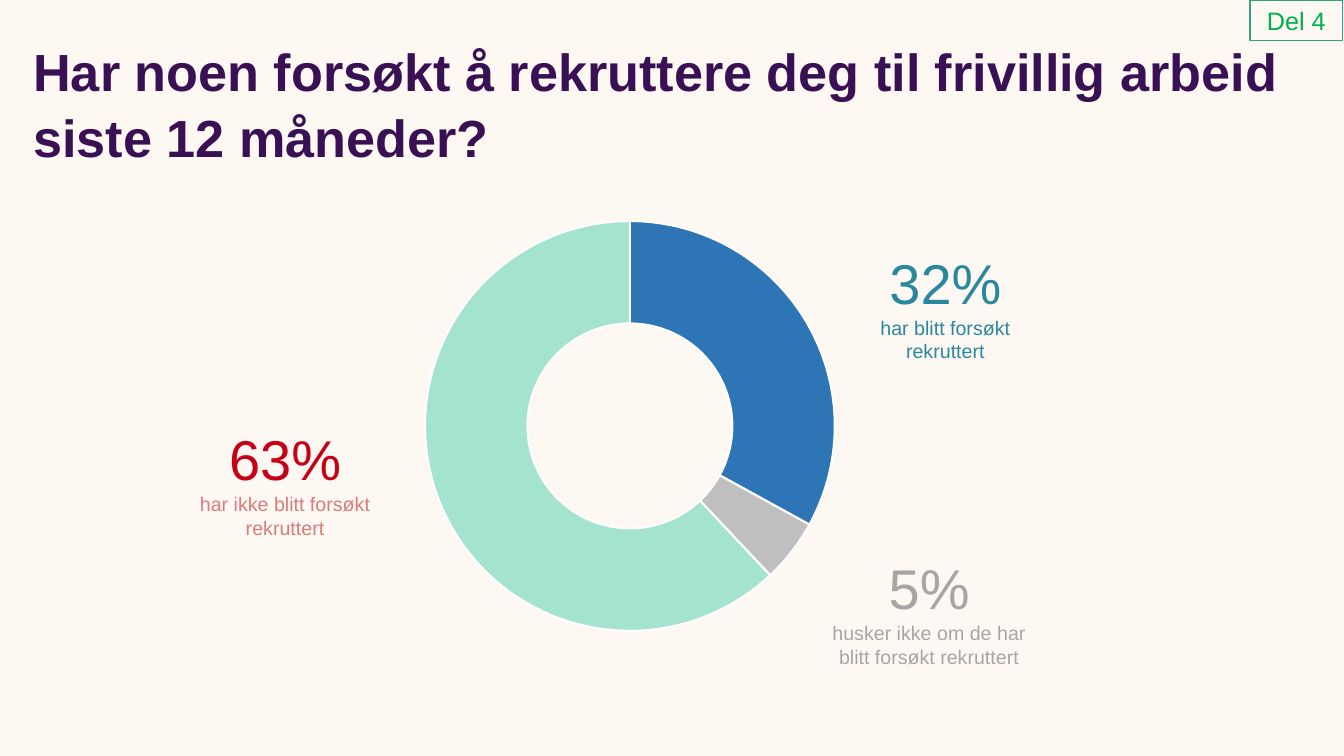
from dataclasses import dataclass

from lxml import etree
from pptx import Presentation
from pptx.chart.data import CategoryChartData as ChartData
from pptx.dml.color import RGBColor as Rgb
from pptx.enum.chart import XL_CHART_TYPE as Kind
from pptx.enum.shapes import MSO_SHAPE as Shape
from pptx.enum.text import MSO_ANCHOR as Anchor, PP_ALIGN as Align
from pptx.oxml import parse_xml
from pptx.oxml.ns import nsdecls, qn
from pptx.util import Cm, Pt


@dataclass(frozen=True)
class Theme:
    font: str = "Arial"
    back: str = "FEF8F3"
    title: str = "3A1054"
    teal: str = "2A889E"
    red: str = "C50017"
    rose: str = "DA7C7C"
    gray: str = "A6A6A6"
    tag: str = "00B050"
    frame: str = "32A17D"
    edge: str = "FFFFFF"
    slices: tuple = ("2E75B6", "BFBFBF", "A4E3CE")
    head: float = 37.3
    big: float = 40
    small: float = 14
    mark: float = 18


theme = Theme()


def style(font, size, color, bold=False):
    font.name = theme.font
    font.size = Pt(size)
    font.bold = bold
    font.color.rgb = Rgb.from_string(color)


def add_box(slide, box):
    frame = slide.shapes.add_textbox(*map(Cm, box)).text_frame
    frame.word_wrap = True
    frame.margin_left = frame.margin_right = 0
    frame.margin_top = frame.margin_bottom = 0
    return frame


def add_title(slide, box, text):
    para = add_box(slide, box).paragraphs[0]
    para.text = text
    para.line_spacing = 1.05
    style(para.font, theme.head, theme.title, True)


def add_label(slide, box, share, note, color, tint):
    """A large percentage with its explanation below."""
    frame = add_box(slide, box)
    top, low = frame.paragraphs[0], frame.add_paragraph()
    top.text, low.text = share, note
    top.alignment = low.alignment = Align.CENTER
    top.line_spacing = 1.5
    style(top.font, theme.big, color)
    style(low.font, theme.small, tint)


def add_ring(slide, box, values):
    data = ChartData()
    data.categories = [str(i + 1) for i in range(len(values))]
    data.add_series("Series 1", values)
    chart = slide.shapes.add_chart(Kind.DOUGHNUT, *map(Cm, box), data).chart
    chart.has_legend = chart.has_title = False
    style(chart.font, theme.big, theme.slices[-1])
    plot = chart.plots[0]
    plot.vary_by_categories = False

    # Slice colours
    for i, color in enumerate(theme.slices):
        look = plot.series[0].points[i].format
        look.fill.solid()
        look.fill.fore_color.rgb = Rgb.from_string(color)
        look.line.color.rgb = Rgb.from_string(theme.edge)
        look.line.width = Pt(1.5)

    # Hole size and place of the ring within the chart
    area = chart.element.find(".//" + qn("c:plotArea"))
    area.find(".//" + qn("c:holeSize")).set("val", "73")
    for old in area.findall(qn("c:layout")):
        area.remove(old)
    layout = parse_xml(f"<c:layout {nsdecls('c')}><c:manualLayout/></c:layout>")
    parts = [("layoutTarget", "inner"), ("xMode", "edge"), ("yMode", "edge"),
             ("x", 0.246), ("y", 0.182), ("w", 0.545), ("h", 0.818)]
    for name, val in parts:
        etree.SubElement(layout[0], qn("c:" + name)).set("val", str(val))
    area.insert(0, layout)


def add_tag(slide, box, text):
    tag = slide.shapes.add_shape(Shape.RECTANGLE, *map(Cm, box))
    tag.shadow.inherit = False
    tag.fill.background()
    tag.line.color.rgb = Rgb.from_string(theme.frame)
    tag.line.width = Pt(1)
    frame = tag.text_frame
    frame.word_wrap = False
    frame.vertical_anchor = Anchor.MIDDLE
    para = frame.paragraphs[0]
    para.text = text
    para.alignment = Align.CENTER
    style(para.font, theme.mark, theme.tag)


def main():
    deck = Presentation()
    deck.slide_width, deck.slide_height = Cm(33.87), Cm(19.05)
    slide = deck.slides.add_slide(deck.slide_layouts[6])
    fill = slide.background.fill
    fill.solid()
    fill.fore_color.rgb = Rgb.from_string(theme.back)

    add_title(slide, (0.84, 0.91, 31.85, 1.12),
              "Har noen forsøkt å rekruttere deg til frivillig arbeid "
              "siste 12 måneder?")
    add_ring(slide, (6.05, 2.84, 18.95, 13.36), (33, 5, 62))

    # Labels around the ring
    labels = [
        (20.9, 13.11, "5%", "husker ikke om de har blitt forsøkt rekruttert",
         theme.gray, theme.gray),
        (21.31, 5.41, "32%", "har blitt forsøkt rekruttert",
         theme.teal, theme.teal),
        (4.67, 9.86, "63%", "har ikke blitt forsøkt rekruttert",
         theme.red, theme.rose),
    ]
    for left, top, *rest in labels:
        add_label(slide, (left, top, 5.03, 3.76), *rest)

    add_tag(slide, (31.5, 0, 2.34, 1.02), "Del 4")
    deck.save("out.pptx")


if __name__ == "__main__":
    main()
